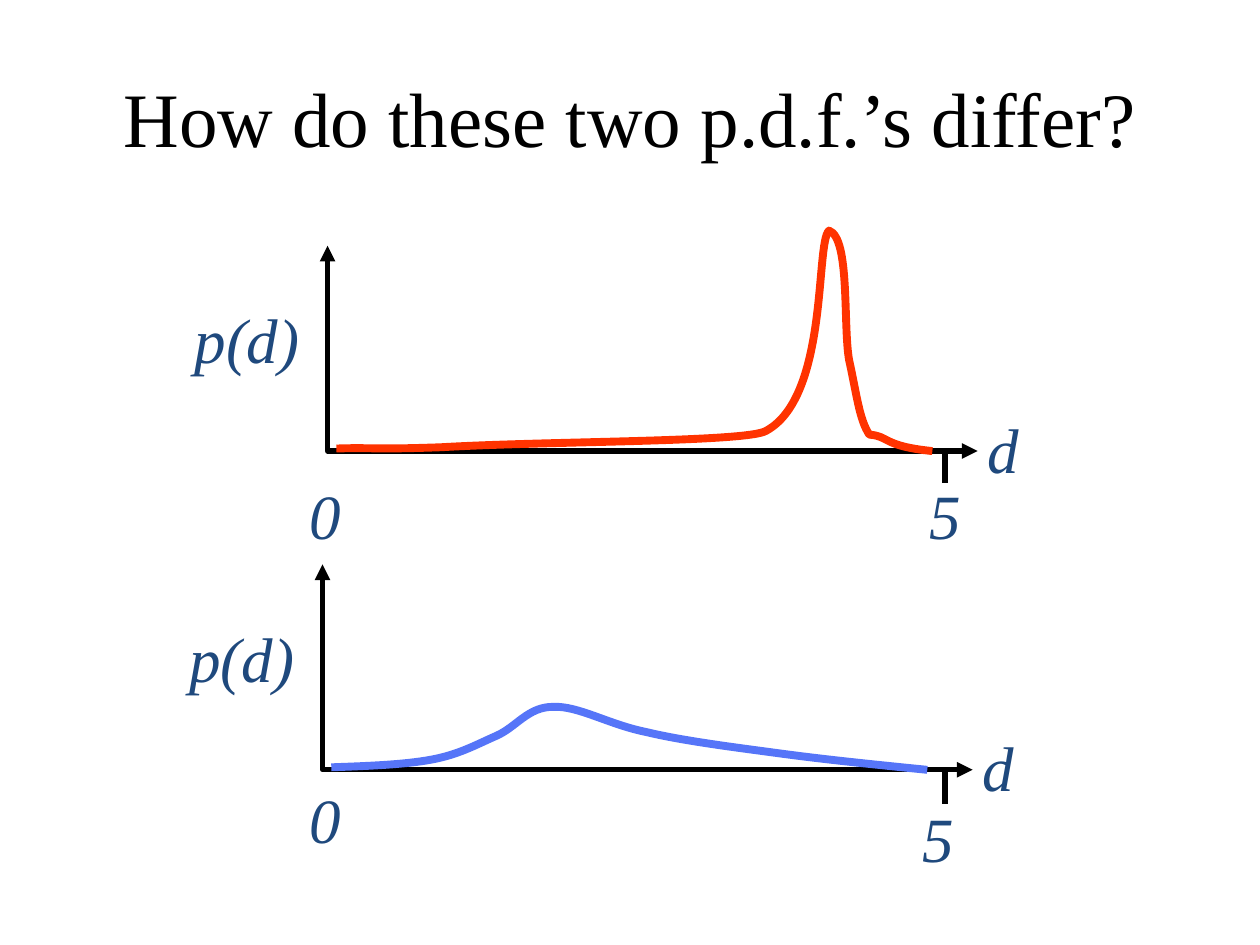
from lxml.etree import SubElement
from pptx import Presentation
from pptx.dml.color import RGBColor
from pptx.enum.shapes import MSO_CONNECTOR
from pptx.enum.text import MSO_ANCHOR, PP_ALIGN
from pptx.oxml.ns import qn
from pptx.util import Inches, Pt

BLACK = RGBColor(0x00, 0x00, 0x00)
NAVY = RGBColor(0x1F, 0x49, 0x7D)
RED = RGBColor(0xFF, 0x33, 0x00)
BLUE = RGBColor(0x56, 0x75, 0xF8)
FONT = "Times New Roman"
TICK_X, TICK_LENGTH = 7.5, 0.25

# Each density: start point, then Bezier segments (control, control, end)
PEAKED_DENSITY = [
    (2.67, 3.56),
    (2.96, 3.55), (2.93, 3.57), (3.5, 3.55),
    (4.36, 3.5), (5.93, 3.51), (6.08, 3.42),
    (6.58, 3.15), (6.47, 1.93), (6.58, 1.83),
    (6.75, 1.89), (6.69, 2.59), (6.74, 2.86),
    (6.8, 3.13), (6.82, 3.33), (6.9, 3.45),
    (7.06, 3.46), (7, 3.54), (7.4, 3.58),
]
BROAD_DENSITY = [
    (2.63, 6.09),
    (2.91, 6.08), (3.2, 6.07), (3.42, 6.03),
    (3.64, 5.99), (3.78, 5.91), (3.94, 5.84),
    (4.1, 5.77), (4.19, 5.61), (4.39, 5.61),
    (4.59, 5.6), (4.83, 5.75), (5.13, 5.81),
    (5.42, 5.88), (5.82, 5.93), (6.19, 5.98),
    (6.56, 6.03), (6.96, 6.07), (7.36, 6.11),
]


def add_text(slide, text, left, top, width=1.17, height=0.83,
             size=36, color=NAVY, italic=True):
    box = slide.shapes.add_textbox(
        Inches(left), Inches(top), Inches(width), Inches(height))
    frame = box.text_frame
    frame.word_wrap = True
    frame.vertical_anchor = MSO_ANCHOR.MIDDLE
    paragraph = frame.paragraphs[0]
    paragraph.text = text
    paragraph.alignment = PP_ALIGN.CENTER
    font = paragraph.font
    font.name, font.size, font.italic = FONT, Pt(size), italic
    font.color.rgb = color


def add_outline(slide, points, color, width):
    start, *rest = [(Inches(x), Inches(y)) for x, y in points]
    builder = slide.shapes.build_freeform(*start)
    builder.add_line_segments(rest, close=False)
    outline = builder.convert_to_shape()
    outline.shadow.inherit = False
    outline.fill.background()
    outline.line.color.rgb = color
    outline.line.width = Pt(width)
    return outline


def add_density(slide, points, color):
    density = add_outline(slide, points, color, 4.5)
    # Join every three line segments into one Bezier segment
    lines = list(density._element.iter(qn("a:lnTo")))
    for first in range(0, len(lines), 3):
        curve = SubElement(lines[first].getparent(), qn("a:cubicBezTo"))
        for line in lines[first:first + 3]:
            curve.append(line[0])
            line.getparent().remove(line)


def add_axes(slide, x, y):
    axes = add_outline(slide, [(x, y - 1.63), (x, y), (x + 5.16, y)], BLACK, 3)
    stroke = axes.line._get_or_add_ln()
    SubElement(stroke, qn("a:round"))
    for end in ("a:headEnd", "a:tailEnd"):
        SubElement(stroke, qn(end), type="triangle")


def add_tick(slide, top):
    tick = slide.shapes.add_connector(
        MSO_CONNECTOR.STRAIGHT, Inches(TICK_X), Inches(top),
        Inches(TICK_X), Inches(top + TICK_LENGTH))
    tick.line.color.rgb = BLACK
    tick.line.width = Pt(3)
    SubElement(tick._element.spPr, qn("a:effectLst"))


def add_plot(slide, origin, density, color, tick_top, zero_top, five_at):
    x, y = origin
    add_axes(slide, x, y)
    add_density(slide, density, color)
    # Axis names
    add_text(slide, "d", x + 4.78, y - 0.44)
    add_text(slide, "p(d)", x - 1.35, y - 1.31, width=1.42)
    # Scale
    add_tick(slide, tick_top)
    add_text(slide, "0", 2, zero_top)
    add_text(slide, "5", *five_at)


def main():
    prs = Presentation()
    prs.slide_width, prs.slide_height = Inches(10), Inches(7.5)
    slide = prs.slides.add_slide(prs.slide_layouts[6])

    # Title
    add_text(slide, "How do these two p.d.f.’s differ?", 0, 0.3, 10, 1.25,
             size=44, color=BLACK, italic=False)

    # Sharply peaked density above, broad density below
    add_plot(slide, (2.6, 3.58), PEAKED_DENSITY, RED,
             tick_top=3.58, zero_top=3.67, five_at=(6.92, 3.67))
    add_plot(slide, (2.56, 6.11), BROAD_DENSITY, BLUE,
             tick_top=6.13, zero_top=6.08, five_at=(6.86, 6.23))

    prs.save("out.pptx")


if __name__ == "__main__":
    main()
